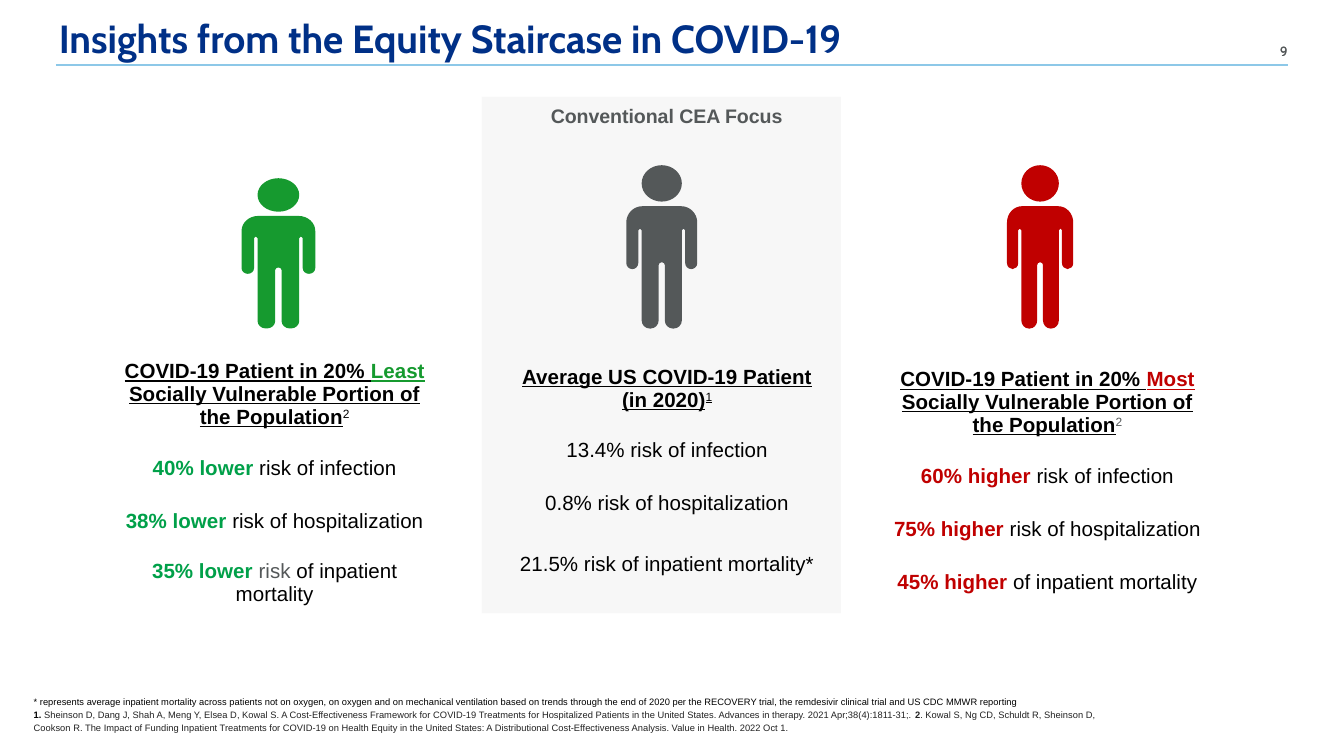
"""Build the slide on equity insights for COVID-19 patients."""
from dataclasses import dataclass, field
from math import hypot

from lxml import etree
from pptx import Presentation
from pptx.dml.color import RGBColor
from pptx.enum.shapes import MSO_CONNECTOR, MSO_SHAPE
from pptx.enum.text import MSO_ANCHOR, PP_ALIGN
from pptx.oxml.ns import qn
from pptx.util import Pt

LEFT, CENTER, RIGHT = PP_ALIGN.LEFT, PP_ALIGN.CENTER, PP_ALIGN.RIGHT
TOP, MIDDLE = MSO_ANCHOR.TOP, MSO_ANCHOR.MIDDLE
LINE, RECTANGLE = MSO_CONNECTOR.STRAIGHT, MSO_SHAPE.RECTANGLE
PLAIN_TABLE = "{2D5ABB26-0587-4C30-8999-92F81FD0307C}"
BLACK, GRAY, NAVY, INK = "000000", "545859", "003087", "222222"
GREEN, LEAF, RED = "169A2F", "00A049", "C00000"
HALF_WIDTH, FULL_HEIGHT, FEET = 26.5, 121, 176
HALF_BODY = [
    (26.5, 30.4, 12), (26.5, 77, 4.5), (17.5, 77, 4.5), (17.5, 47, 1.2),
    (15, 47, 1.2), (15, 121, 6), (2.3, 121, 6), (2.3, 72, 2),
]
HALF_HEAD = [(15, 0, 15), (15, 27, 15)]
CURVE_PULLS = (1, 0.45)


@dataclass
class Span:
    text: str
    color: str = BLACK
    style: dict = field(default_factory=dict)
    raised: bool = False


@dataclass
class Group:
    color: str
    figure_left: float
    figure_top: float
    figure_width: float
    table_left: float
    table_top: float
    table_width: float
    row_heights: list[float]
    rows: list[list[Span]]


BOLD = {"bold": True}
HEADING = {"bold": True, "underline": True}


def vulnerable_heading(level: str, color: str, note_color: str) -> list[Span]:
    return [
        Span("COVID-19 Patient in 20% ", BLACK, HEADING),
        Span(f"{level} ", color, HEADING),
        Span("Socially Vulnerable Portion of the Population", BLACK, HEADING),
        Span("2", note_color, raised=True),
    ]


GROUPS = [
    Group(GRAY, 335.5, 88.5, 38, 272.4, 189.5, 170, [37.8, 28.2, 28.2, 37.8], [
        [Span("Average US COVID-19 Patient (in 2020)", BLACK, HEADING),
         Span("1", BLACK, {"underline": True}, True)],
        [Span("13.4% risk of infection")],
        [Span("0.8% risk of hospitalization")],
        [Span("21.5% risk of inpatient mortality*")],
    ]),
    Group(RED, 539.5, 88.5, 35.5, 470.4, 190, 181.5, [51.3, 28.2, 28.2, 28.2], [
        vulnerable_heading("Most", RED, GRAY),
        [Span("60% higher", RED, BOLD), Span(" risk of infection")],
        [Span("75% higher ", RED, BOLD), Span("risk of hospitalization")],
        [Span("45% higher", RED, BOLD), Span(" of inpatient mortality")],
    ]),
    Group(GREEN, 129.4, 95.5, 39.5, 56.4, 185.7, 181.5, [51.3, 28.2, 28.2, 37.8], [
        vulnerable_heading("Least", GREEN, BLACK),
        [Span("40% lower ", LEAF, BOLD), Span("risk of infection")],
        [Span("38% lower ", LEAF, BOLD), Span("risk of hospitalization")],
        [Span("35% lower ", LEAF, BOLD), Span("risk ", GRAY), Span("of inpatient mortality")],
    ]),
]
FOOTNOTES = [
    [Span("* represents average inpatient mortality across patients not on oxygen, on oxygen and on "
          "mechanical ventilation based on trends through the end of 2020 per the RECOVERY trial, "
          "the remdesivir clinical trial and US CDC MMWR reporting")],
    [Span("1. ", BLACK, BOLD),
     Span("Sheinson D, Dang J, Shah A, Meng Y, Elsea D, Kowal S. A Cost-Effectiveness Framework for "
          "COVID-19 Treatments for Hospitalized Patients in the United States. Advances in therapy. "
          "2021 Apr;38(4):1811-31;.", INK),
     Span("2", INK, BOLD),
     Span(". Kowal S, Ng CD, Schuldt R, Sheinson D, Cookson R. The Impact of Funding Inpatient "
          "Treatments for COVID-19 on Health Equity in the United States: A Distributional "
          "Cost-Effectiveness Analysis. Value in Health. 2022 Oct 1.", INK)],
]


def rgb(color: str) -> RGBColor:
    return RGBColor.from_string(color)


def write(frame, lines: list[list[Span]], size: float, font: str = "Arial",
          align=LEFT, spacing: float = 1.0) -> None:
    for index, spans in enumerate(lines):
        para = frame.add_paragraph() if index else frame.paragraphs[0]
        para.alignment, para.line_spacing = align, spacing
        for item in spans:
            span = para.add_run()
            span.text = item.text
            style = {"name": font, "size": Pt(size), "bold": False, "underline": False} | item.style
            for name, value in style.items():
                setattr(span.font, name, value)
            span.font.color.rgb = rgb(item.color)
            if item.raised:
                span._r.get_or_add_rPr().set("baseline", "30000")


def set_frame(frame, side: float, edge: float) -> None:
    values = {"margin_left": Pt(side), "margin_right": Pt(side), "margin_top": Pt(edge),
              "margin_bottom": Pt(edge), "word_wrap": True, "vertical_anchor": TOP}
    for name, value in values.items():
        setattr(frame, name, value)


def add_text(page, bounds: tuple, lines: list[list[Span]], size: float,
             side: float = 0, edge: float = 0, **layout) -> None:
    frame = page.shapes.add_textbox(*map(Pt, bounds)).text_frame
    set_frame(frame, side, edge)
    write(frame, lines, size, **layout)


def rounded_outline(half: list[tuple]) -> list[tuple]:
    """Return four points a corner: curve start, two controls and curve end."""
    corners = half + [(-x, y, radius) for x, y, radius in reversed(half)]
    points = []
    for index, (x, y, radius) in enumerate(corners):
        sides = []
        for other in (corners[index - 1], corners[(index + 1) % len(corners)]):
            across, down = other[0] - x, other[1] - y
            length = hypot(across, down)
            share = min(radius / length, 0.5)
            sides.append([(x + across * share * pull, y + down * share * pull)
                          for pull in CURVE_PULLS])
        before, after = sides
        points += before + after[::-1]
    return points


def curve_corners(shape) -> None:
    outline = shape._element.spPr.find(f".//{qn('a:path')}")
    steps = [step for step in outline if step.tag != qn("a:close")]
    for start in range(0, len(steps), 4):
        curve, *others = steps[start + 1:start + 4]
        curve.tag = qn("a:cubicBezTo")
        for other in others:
            curve.append(other[0])
            outline.remove(other)


def add_figure(page, group: Group) -> None:
    across = group.figure_width / 2 / HALF_WIDTH
    down = (FEET - group.figure_top) / FULL_HEIGHT
    center = group.figure_left + group.figure_width / 2
    body, head = (
        [(Pt(center + x * across), Pt(group.figure_top + y * down))
         for x, y in rounded_outline(half)]
        for half in (HALF_BODY, HALF_HEAD)
    )
    builder = page.shapes.build_freeform(*body[0])
    builder.add_line_segments(body[1:], close=True)
    builder.move_to(*head[0])
    builder.add_line_segments(head[1:], close=True)
    figure = builder.convert_to_shape()
    curve_corners(figure)
    fill_shape(figure, group.color)


def fill_shape(shape, color: str) -> None:
    shape.shadow.inherit = False
    shape.fill.solid()
    shape.fill.fore_color.rgb = rgb(color)
    shape.line.fill.background()


def add_risk_table(page, group: Group) -> None:
    bounds = (group.table_left, group.table_top, group.table_width, sum(group.row_heights))
    table = page.shapes.add_table(len(group.rows), 1, *map(Pt, bounds)).table
    table.first_row = table.horz_banding = False
    table._tbl.tblPr.find(qn("a:tableStyleId")).text = PLAIN_TABLE
    for index, (height, spans) in enumerate(zip(group.row_heights, group.rows)):
        table.rows[index].height = Pt(height)
        cell = table.cell(index, 0)
        cell.fill.background()
        cell.vertical_anchor = MIDDLE
        for side in ("left", "right", "top", "bottom"):
            setattr(cell, f"margin_{side}", Pt(5))
        write(cell.text_frame, [spans], 11, align=CENTER)


def main() -> None:
    deck = Presentation()
    deck.slide_width, deck.slide_height = Pt(720), Pt(405)
    page = deck.slides.add_slide(deck.slide_layouts[5])

    title = page.shapes.title
    title.left, title.top, title.width, title.height = map(Pt, (31.5, 7.6, 646, 39))
    set_frame(title.text_frame, 0, 0)
    write(title.text_frame, [[Span("Insights from the Equity Staircase in COVID-19", NAVY, BOLD)]],
          21, "Cabin")
    for font in ("Roboto", "Cabin"):
        add_text(page, (667.3, 19.5, 29.5, 13), [[Span("9", GRAY)]], 7, 7.2, 3.6,
                 font=font, align=RIGHT)
    rule = page.shapes.add_connector(LINE, Pt(30), Pt(35), Pt(690), Pt(35))
    rule.line.color.rgb, rule.line.width = rgb("8DC8E8"), Pt(1)
    etree.SubElement(rule._element.spPr, qn("a:effectLst"))

    panel = page.shapes.add_shape(RECTANGLE, *map(Pt, (258.2, 52, 192.3, 276.5)))
    fill_shape(panel, "F2F2F2")
    tint = panel._element.spPr.find(f"{qn('a:solidFill')}/{qn('a:srgbClr')}")
    etree.SubElement(tint, qn("a:alpha"), val="60000")
    add_text(page, (275.5, 55.5, 163.5, 13), [[Span("Conventional CEA Focus", GRAY, BOLD)]], 10.5,
             align=CENTER)

    for group in GROUPS:
        add_figure(page, group)
        add_risk_table(page, group)
    add_text(page, (11, 365, 597.5, 24), FOOTNOTES, 5, 7.2, 7.2, spacing=1.15)
    deck.save("out.pptx")


if __name__ == "__main__":
    main()
